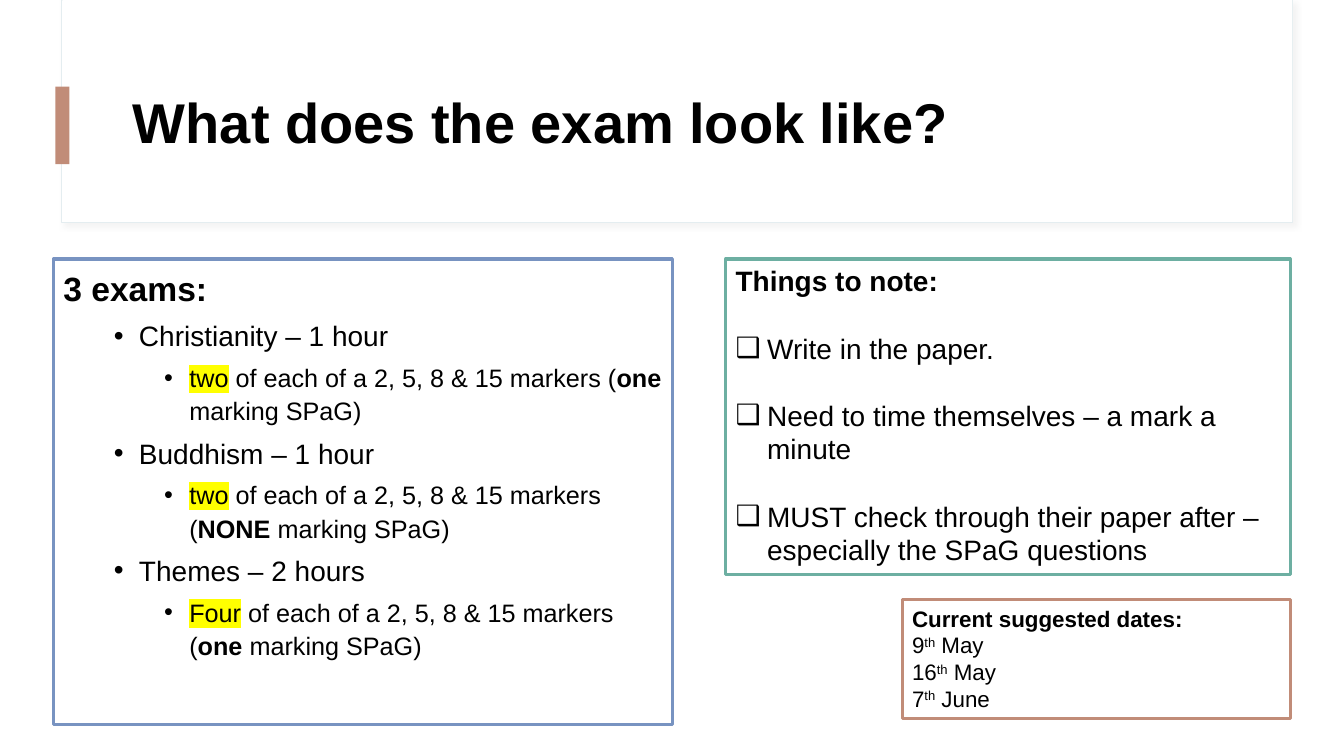
from dataclasses import dataclass

from lxml.etree import SubElement
from pptx import Presentation
from pptx.dml.color import RGBColor
from pptx.enum.shapes import MSO_SHAPE
from pptx.enum.text import MSO_ANCHOR, MSO_AUTO_SIZE, PP_ALIGN
from pptx.oxml import parse_xml
from pptx.oxml.ns import nsdecls, qn
from pptx.util import Pt


@dataclass(frozen=True)
class Theme:
    font: str = "Arial"
    text: str = "000000"
    paper: str = "FFFFFF"
    band_line: str = "E4EDF0"
    shadow: str = "D9D9D9"
    clay: str = "C18C78"
    blue: str = "7893C1"
    green: str = "6DAFA2"
    highlight: str = "FFFF00"
    title_size: int = 40
    heading_size: int = 24
    body_size: int = 20
    detail_size: int = 18
    dates_size: int = 16


theme = Theme()


def add_paragraph(frame, runs, size, before=0, spacing=1.0, bullet=None, left=0, hanging=0, level=0):
    """Add (text, style) runs; style is "", "bold", "highlight" or "superscript"."""
    paragraph = frame.add_paragraph() if frame.text else frame.paragraphs[0]
    paragraph.alignment = PP_ALIGN.LEFT
    paragraph.level = level
    paragraph.line_spacing = spacing
    paragraph.space_before = Pt(before)
    if bullet:
        properties = paragraph._p.get_or_add_pPr()
        properties.set("marL", str(Pt(left)))
        properties.set("indent", str(-Pt(hanging)))
        SubElement(properties, qn("a:buFont"), typeface=theme.font)
        SubElement(properties, qn("a:buChar"), char=bullet)
    for text, style in runs:
        run = paragraph.add_run()
        run.text = text
        run.font.size = Pt(size)
        run.font.bold = style == "bold"
        run.font.color.rgb = RGBColor.from_string(theme.text)
        run.font.name = theme.font
        properties = run._r.get_or_add_rPr()
        if style == "superscript":
            properties.set("baseline", "30000")
        if style == "highlight":
            properties.find(qn("a:solidFill")).addnext(parse_xml(
                f'<a:highlight {nsdecls("a")}><a:srgbClr val="{theme.highlight}"/></a:highlight>'))


def add_panel(left, top, width, height, color):
    """Add an outlined text box and return its text frame."""
    panel = slide.shapes.add_textbox(Pt(left), Pt(top), Pt(width), Pt(height))
    panel.line.color.rgb = RGBColor.from_string(color)
    panel.line.width = Pt(2.25)
    panel.text_frame.word_wrap = True
    return panel.text_frame


presentation = Presentation()
presentation.slide_width, presentation.slide_height = Pt(960), Pt(540)
slide = presentation.slides.add_slide(presentation.slide_layouts[5])

# Title band and accent bar
for left, top, width, height, fill, line in [
    (43.9, 0, 879.1, 159.1, theme.paper, theme.band_line),
    (44.6, 0, 878.4, 158.4, theme.paper, None),
    (39.6, 61.9, 10.1, 55.4, theme.clay, None),
]:
    shape = slide.shapes.add_shape(MSO_SHAPE.RECTANGLE, Pt(left), Pt(top), Pt(width), Pt(height))
    shape.shadow.inherit = False
    shape.fill.solid()
    shape.fill.fore_color.rgb = RGBColor.from_string(fill)
    if line:
        shape.line.color.rgb = RGBColor.from_string(line)
        shape.line.width = Pt(0.75)
        shape._element.spPr.find(qn("a:effectLst")).append(parse_xml(
            f'<a:outerShdw {nsdecls("a")} blurRad="{Pt(4)}" dist="{Pt(3)}" dir="2700000">'
            f'<a:srgbClr val="{theme.shadow}"><a:alpha val="30000"/></a:srgbClr></a:outerShdw>'))
    else:
        shape.line.fill.background()

# Title, brought in front of the band
title = slide.shapes.title
title.left, title.top, title.width, title.height = Pt(87.8), Pt(43.2), Pt(800.6), Pt(92.9)
title.text_frame.auto_size = MSO_AUTO_SIZE.NONE
title.text_frame.vertical_anchor = MSO_ANCHOR.MIDDLE
add_paragraph(title.text_frame, [("What does the exam look like?", "bold")], theme.title_size, spacing=0.9)
slide.shapes._spTree.append(title._element)

# Exams
exams = add_panel(38.2, 185, 442.1, 332.6, theme.blue)
add_paragraph(exams, [("3 exams:", "bold")], theme.heading_size, before=10, spacing=1.1)
for exam, count, marked in [
    ("Christianity – 1 hour", "two", "one"),
    ("Buddhism – 1 hour", "two", "NONE"),
    ("Themes – 2 hours", "Four", "one"),
]:
    add_paragraph(exams, [(exam, "")], theme.body_size, 5, 1.1, "•", 54, 18, level=1)
    details = [
        (count, "highlight"),
        (" of each of a 2, 5, 8 & 15 markers (", ""),
        (marked, "bold"),
        (" marking SPaG)", ""),
    ]
    add_paragraph(exams, details, theme.detail_size, 5, 1.1, "•", 90, 18, level=2)

# Suggested dates
dates = add_panel(644.4, 428.4, 277.2, 85, theme.clay)
add_paragraph(dates, [("Current suggested dates:", "bold")], theme.dates_size)
for day, month in [("9", "May"), ("16", "May"), ("7", "June")]:
    add_paragraph(dates, [(day, ""), ("th", "superscript"), (f" {month}", "")], theme.dates_size)

# Notes, one line apart
notes = add_panel(518.4, 185, 403.2, 225.4, theme.green)
add_paragraph(notes, [("Things to note:", "bold")], theme.body_size)
for note in [
    "Write in the paper.",
    "Need to time themselves – a mark a minute",
    "MUST check through their paper after – especially the SPaG questions",
]:
    add_paragraph(notes, [(note, "")], theme.body_size, before=24, bullet="❑", left=22.5, hanging=22.5)

presentation.save("out.pptx")
